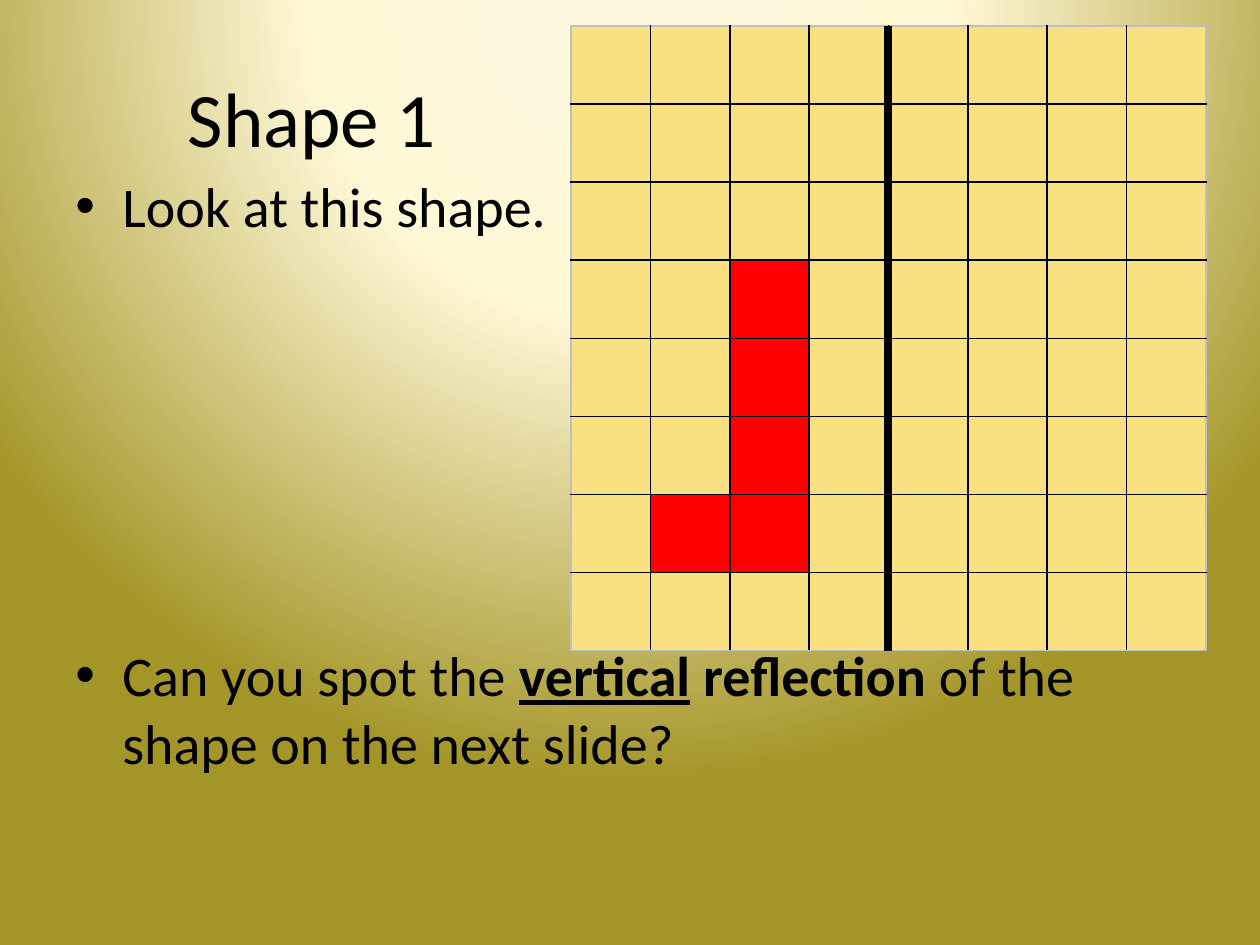
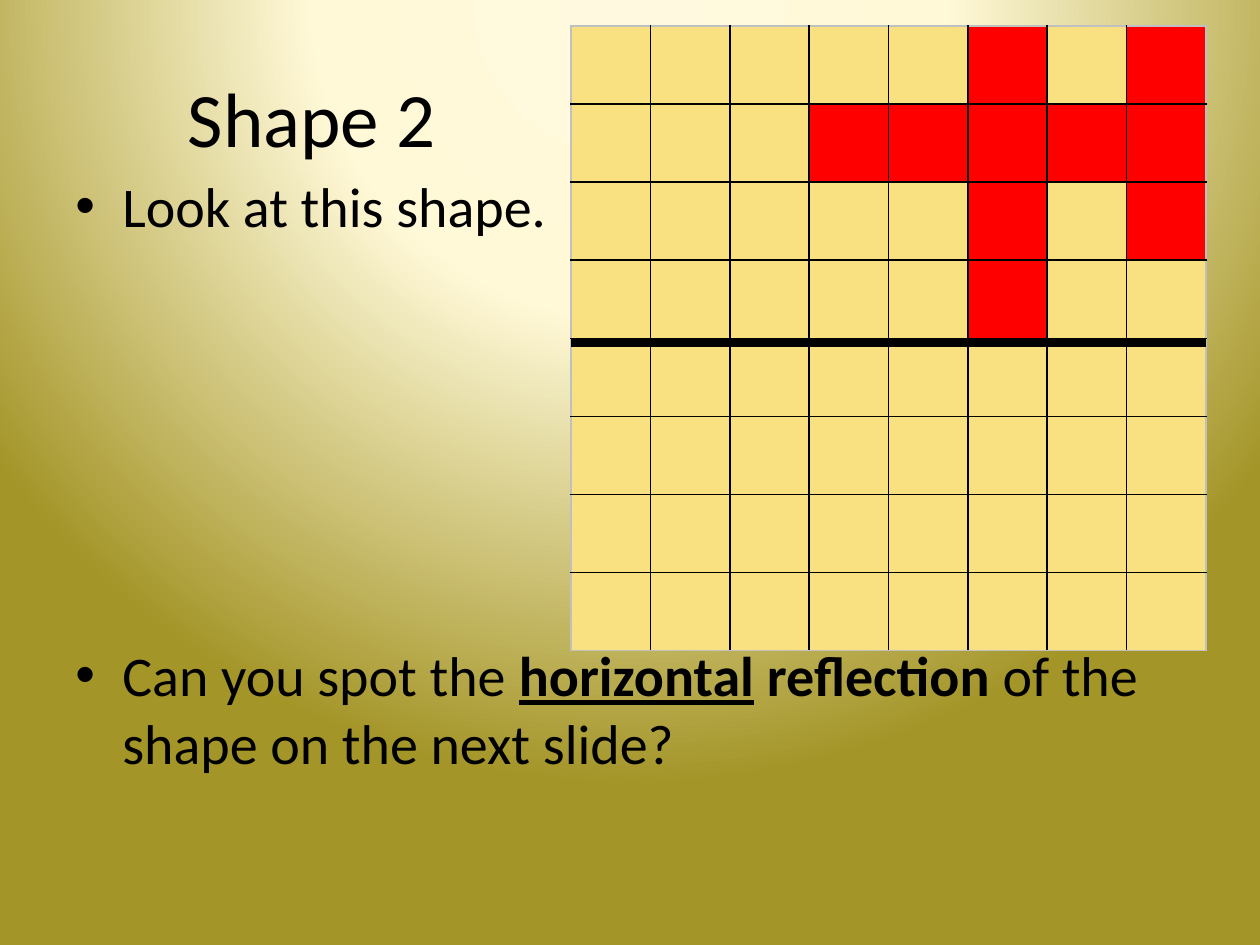
from lxml import etree
from pptx import Presentation
from pptx.dml.color import RGBColor
from pptx.enum.shapes import MSO_CONNECTOR
from pptx.enum.text import MSO_ANCHOR, PP_ALIGN
from pptx.oxml import parse_xml
from pptx.oxml.ns import nsdecls, qn
from pptx.util import Pt

COLORS = {
    "ink": "000000", "square": "F9E181", "shape": "FF0000", "edge": "C0C0C0",
    "glow": "FFFADF", "cream": "FFF9D8", "olive": "A49528",
}
FONT = "Calibri"
GRID_SIZE = 8
GRID_LEFT, GRID_TOP, GRID_WIDTH, GRID_HEIGHT = 571, 26, 635, 625

PUZZLES = [
    {"title": "Shape 1", "direction": "vertical", "mirror": (888, 26, 888, 651),
     "squares": {(3, 2), (4, 2), (5, 2), (6, 1), (6, 2)}},
    {"title": "Shape 2", "direction": "horizontal", "mirror": (571, 343, 1206, 343),
     "squares": {(0, 5), (0, 7), (1, 3), (1, 4), (1, 5), (1, 6), (1, 7),
                 (2, 5), (2, 7), (3, 5)}},
]


def px(length):
    return round(length * 914400 / 126)


def style_run(run, size, bold=False, underline=False):
    run.font.name = FONT
    run.font.size = Pt(size)
    run.font.bold = bold
    run.font.underline = underline
    run.font.color.rgb = RGBColor.from_string(COLORS["ink"])


prs = Presentation()
prs.slide_width, prs.slide_height = px(1260), px(945)

backdrop = prs.slide_master.background.fill
backdrop.solid()
stops = "".join(
    f'<a:gs pos="{position}"><a:srgbClr val="{COLORS[name]}"/></a:gs>'
    for position, name in [(0, "glow"), (40000, "cream"), (100000, "olive")])
gradient = parse_xml(
    f'<a:gradFill {nsdecls("a")} rotWithShape="1"><a:gsLst>{stops}</a:gsLst>'
    '<a:path path="circle"><a:fillToRect l="50000" t="-80000" r="50000" b="180000"/></a:path>'
    '</a:gradFill>')
solid = next(prs.slide_master.element.iter(qn("p:bgPr"))).find(qn("a:solidFill"))
solid.getparent().replace(solid, gradient)

for puzzle in PUZZLES:
    slide = prs.slides.add_slide(prs.slide_layouts[5])

    title = slide.shapes.title
    title.left, title.top, title.width, title.height = px(63), px(38), px(498), px(157)
    title.text_frame.text = puzzle["title"]
    title.text_frame.vertical_anchor = MSO_ANCHOR.MIDDLE
    title.text_frame.paragraphs[0].alignment = PP_ALIGN.CENTER
    style_run(title.text_frame.paragraphs[0].runs[0], 44)

    instructions = slide.shapes.add_textbox(px(63), px(165), px(1134), px(725)).text_frame
    instructions.word_wrap = True
    look = instructions.paragraphs[0]
    look.text = "Look at this shape."
    style_run(look.runs[0], 32)
    question = instructions.add_paragraph()
    question.space_before = Pt(230)
    for words, bold, underline in [
            ("Can you spot the ", False, False), (puzzle["direction"], True, True),
            (" reflection", True, False), (" of the shape on the next slide?", False, False)]:
        run = question.add_run()
        run.text = words
        style_run(run, 32, bold, underline)
    for paragraph in (look, question):
        properties = paragraph._p.get_or_add_pPr()
        properties.set("marL", str(px(47)))
        properties.set("indent", str(px(-47)))
        etree.SubElement(properties, qn("a:buFont")).set("typeface", "Arial")
        etree.SubElement(properties, qn("a:buChar")).set("char", "•")

    grid = slide.shapes.add_table(
        GRID_SIZE, GRID_SIZE, px(GRID_LEFT), px(GRID_TOP), px(GRID_WIDTH), px(GRID_HEIGHT)).table
    grid.first_row = grid.horz_banding = False
    for row in range(GRID_SIZE):
        for column in range(GRID_SIZE):
            square = grid.cell(row, column)
            borders = {"lnL": column == 0, "lnR": column == GRID_SIZE - 1,
                       "lnT": row == 0, "lnB": row == GRID_SIZE - 1}
            for side, outer in borders.items():
                color = COLORS["edge" if outer else "ink"]
                square._tc.get_or_add_tcPr().append(parse_xml(
                    f'<a:{side} {nsdecls("a")} w="12700"><a:solidFill>'
                    f'<a:srgbClr val="{color}"/></a:solidFill></a:{side}>'))
            square.fill.solid()
            name = "shape" if (row, column) in puzzle["squares"] else "square"
            square.fill.fore_color.rgb = RGBColor.from_string(COLORS[name])

    mirror = slide.shapes.add_connector(
        MSO_CONNECTOR.STRAIGHT, *[px(length) for length in puzzle["mirror"]])
    mirror.line.width = Pt(4.5)
    mirror.line.color.rgb = RGBColor.from_string(COLORS["ink"])
    etree.SubElement(mirror._element.spPr, qn("a:effectLst"))

prs.save("out.pptx")
